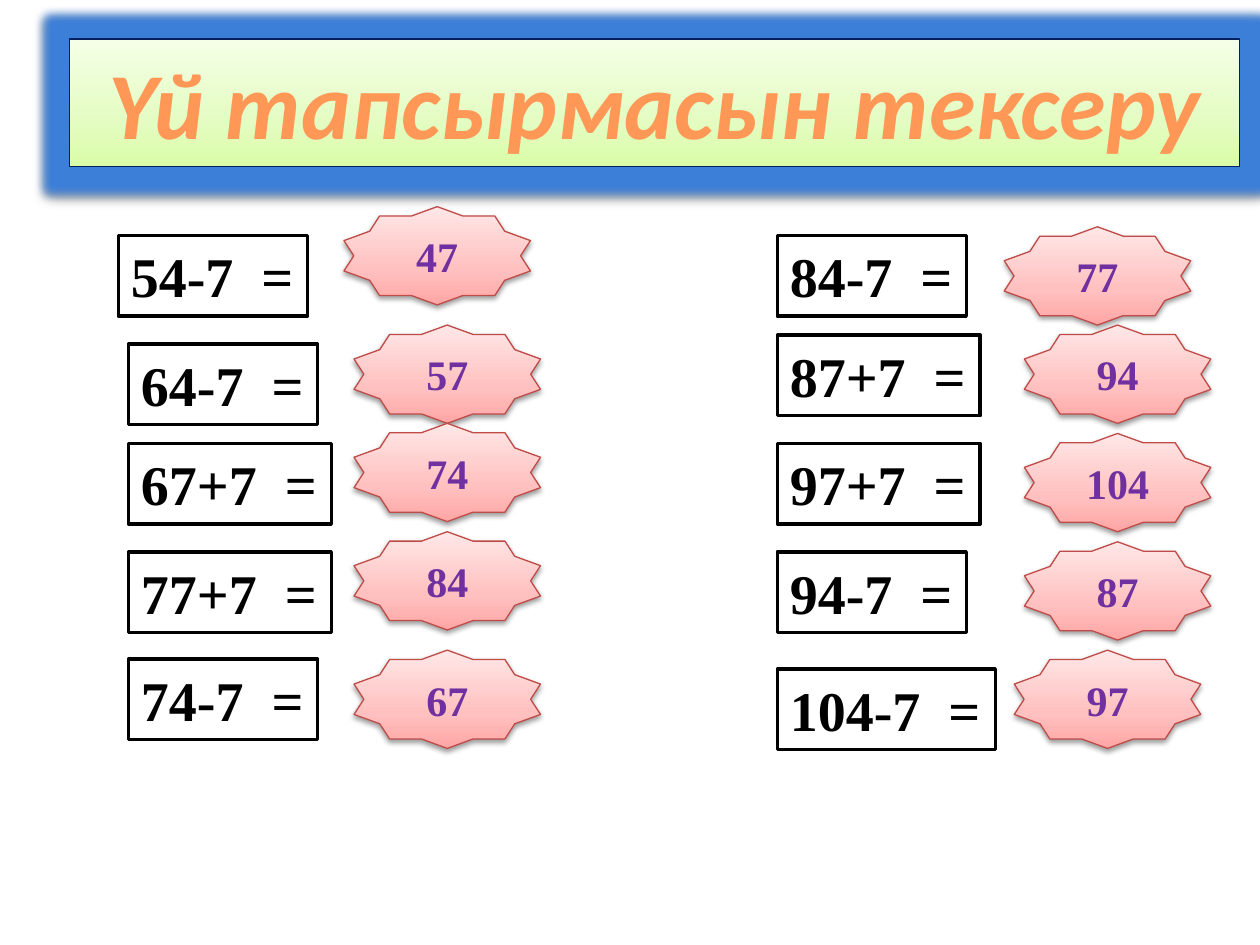
from lxml import etree
from pptx import Presentation
from pptx.dml.color import RGBColor
from pptx.enum.shapes import MSO_SHAPE
from pptx.enum.text import MSO_ANCHOR, MSO_AUTO_SIZE, PP_ALIGN
from pptx.oxml.ns import qn
from pptx.util import Inches, Pt

RECTANGLE = MSO_SHAPE.RECTANGLE
STAR = MSO_SHAPE.STAR_10_POINT
CENTER = PP_ALIGN.CENTER
LEFT = PP_ALIGN.LEFT
TOP = MSO_ANCHOR.TOP
MIDDLE = MSO_ANCHOR.MIDDLE
GROW = MSO_AUTO_SIZE.SHAPE_TO_FIT_TEXT
NO_GROW = MSO_AUTO_SIZE.NONE

TITLE_FILL = [(0, "DAFDA7"), (35, "E4FCC2"), (100, "F5FFE7")]
TITLE_TEXT = [(0, "9D4700"), (78, "FF9856"), (100, "FFF5F1")]
STAR_FILL = [(0, "FFA6A5"), (35, "FFC0BF"), (100, "FFE7E7")]
TITLE_FONT = {"name": "Calibri", "size": Pt(54), "bold": True, "italic": True}
SUM_FONT = {"name": "Times New Roman", "size": Pt(32), "bold": True}
ANSWER_FONT = {"name": "Times New Roman", "size": Pt(24), "bold": True}

BOX_HEIGHT = 0.64
STAR_WIDTH, STAR_HEIGHT = 1.48, 0.78

# Each row: sum, its left, top and width, then answer, its left and top
LEFT_ROWS = [
    ("54-7  =", 0.94, 1.87, 1.5, "47", 2.73, 1.64),
    ("64-7  =", 1.02, 2.73, 1.5, "57", 2.81, 2.58),
    ("67+7  =", 1.02, 3.52, 1.61, "74", 2.81, 3.36),
    ("77+7  =", 1.02, 4.38, 1.61, "84", 2.81, 4.22),
    ("74-7  =", 1.02, 5.23, 1.5, "67", 2.81, 5.16),
]
RIGHT_ROWS = [
    ("84-7  =", 6.17, 1.87, 1.5, "77", 7.97, 1.8),
    ("87+7  =", 6.17, 2.66, 1.61, "94", 8.13, 2.58),
    ("97+7  =", 6.17, 3.52, 1.61, "104", 8.13, 3.44),
    ("94-7  =", 6.17, 4.38, 1.5, "87", 8.13, 4.3),
    ("104-7  =", 6.17, 5.31, 1.73, "97", 8.05, 5.16),
]


def color(value):
    return RGBColor.from_string(value)


def add_color(parent, value, alpha=100):
    node = etree.SubElement(parent, qn("a:srgbClr"), val=value)
    if alpha < 100:
        etree.SubElement(node, qn("a:alpha"), val=str(alpha * 1000))


def set_gradient(fill, properties, stops, angle):
    """Give a fill any number of stops; properties is the element holding it."""
    fill.gradient()
    gradient = properties.find(qn("a:gradFill"))
    for child in list(gradient):
        gradient.remove(child)
    stop_list = etree.SubElement(gradient, qn("a:gsLst"))
    for position, value in stops:
        stop = etree.SubElement(stop_list, qn("a:gs"), pos=str(position * 1000))
        add_color(stop, value)
    etree.SubElement(gradient, qn("a:lin"), ang=str(angle * 60000), scaled="0")


def add_effects(shape, glow=None):
    effects = shape._element.spPr.find(qn("a:effectLst"))
    if glow:
        halo = etree.SubElement(effects, qn("a:glow"), rad=str(Pt(11)))
        add_color(halo, glow)
    shadow = etree.SubElement(
        effects, qn("a:outerShdw"), blurRad=str(Pt(3.1)), dist=str(Pt(1.6)),
        dir="5400000", rotWithShape="0")
    add_color(shadow, "000000", 38)


def add_box(page, kind, box, line, width):
    shape = page.shapes.add_shape(kind, *(Inches(length) for length in box))
    shape.shadow.inherit = False
    shape.line.color.rgb = color(line)
    shape.line.width = Pt(width)
    return shape


def write(shape, text, font, text_color, align, anchor, wrap, size_rule):
    frame = shape.text_frame
    layout = {"word_wrap": wrap, "vertical_anchor": anchor, "auto_size": size_rule}
    for name, value in layout.items():
        setattr(frame, name, value)
    para = frame.paragraphs[0]
    para.alignment = align
    span = para.add_run()
    span.text = text
    for name, value in font.items():
        setattr(span.font, name, value)
    span.font.color.rgb = color(text_color)
    return span


def add_title(page, box):
    banner = add_box(page, RECTANGLE, box, "002060", 0.75)
    set_gradient(banner.fill, banner._element.spPr, TITLE_FILL, 270)
    add_effects(banner, glow="3C7FD9")
    span = write(banner, "Үй тапсырмасын тексеру", TITLE_FONT, "FF9856",
                 CENTER, TOP, True, GROW)
    set_gradient(span.font.fill, span._r.get_or_add_rPr(), TITLE_TEXT, 90)


def add_sum(page, text, box):
    shape = add_box(page, RECTANGLE, box, "000000", 2)
    shape.fill.solid()
    shape.fill.fore_color.rgb = color("FFFFFF")
    write(shape, text, SUM_FONT, "000000", LEFT, TOP, False, GROW)


def add_answer(page, text, box):
    star = add_box(page, STAR, box, "BF4C48", 0.75)
    set_gradient(star.fill, star._element.spPr, STAR_FILL, 270)
    add_effects(star)
    write(star, text, ANSWER_FONT, "7030A0", CENTER, MIDDLE, True, NO_GROW)


def add_column(page, rows):
    for task, left, top, width, answer, star_left, star_top in rows:
        add_sum(page, task, (left, top, width, BOX_HEIGHT))
        add_answer(page, answer, (star_left, star_top, STAR_WIDTH, STAR_HEIGHT))


def main():
    deck = Presentation()
    deck.slide_width, deck.slide_height = Inches(10), Inches(7.5)
    page = deck.slides.add_slide(deck.slide_layouts[6])
    # Heading banner
    add_title(page, (0.55, 0.31, 9.29, 1.01))
    # Sums with their answers
    for rows in (LEFT_ROWS, RIGHT_ROWS):
        add_column(page, rows)
    deck.save("out.pptx")


if __name__ == "__main__":
    main()
